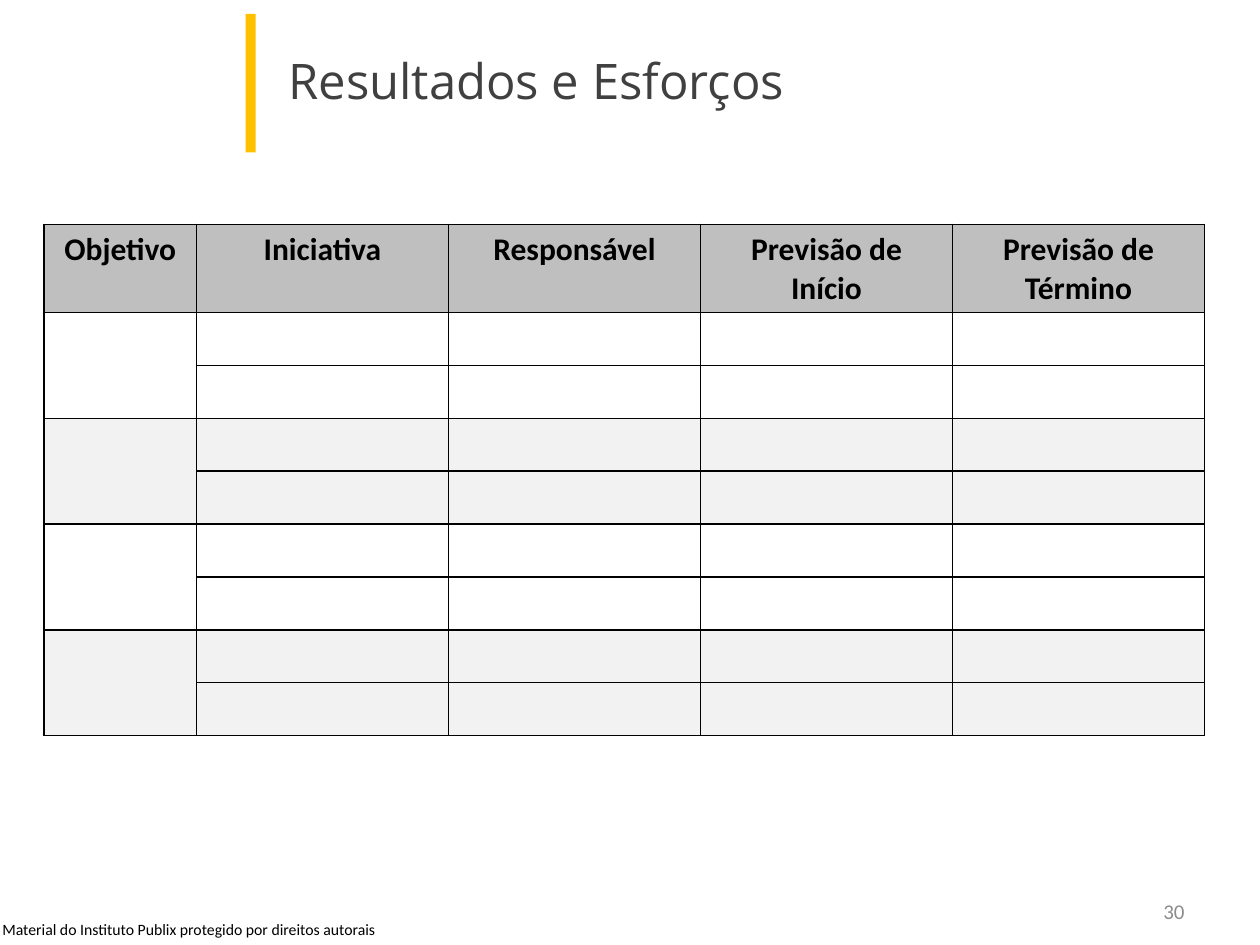
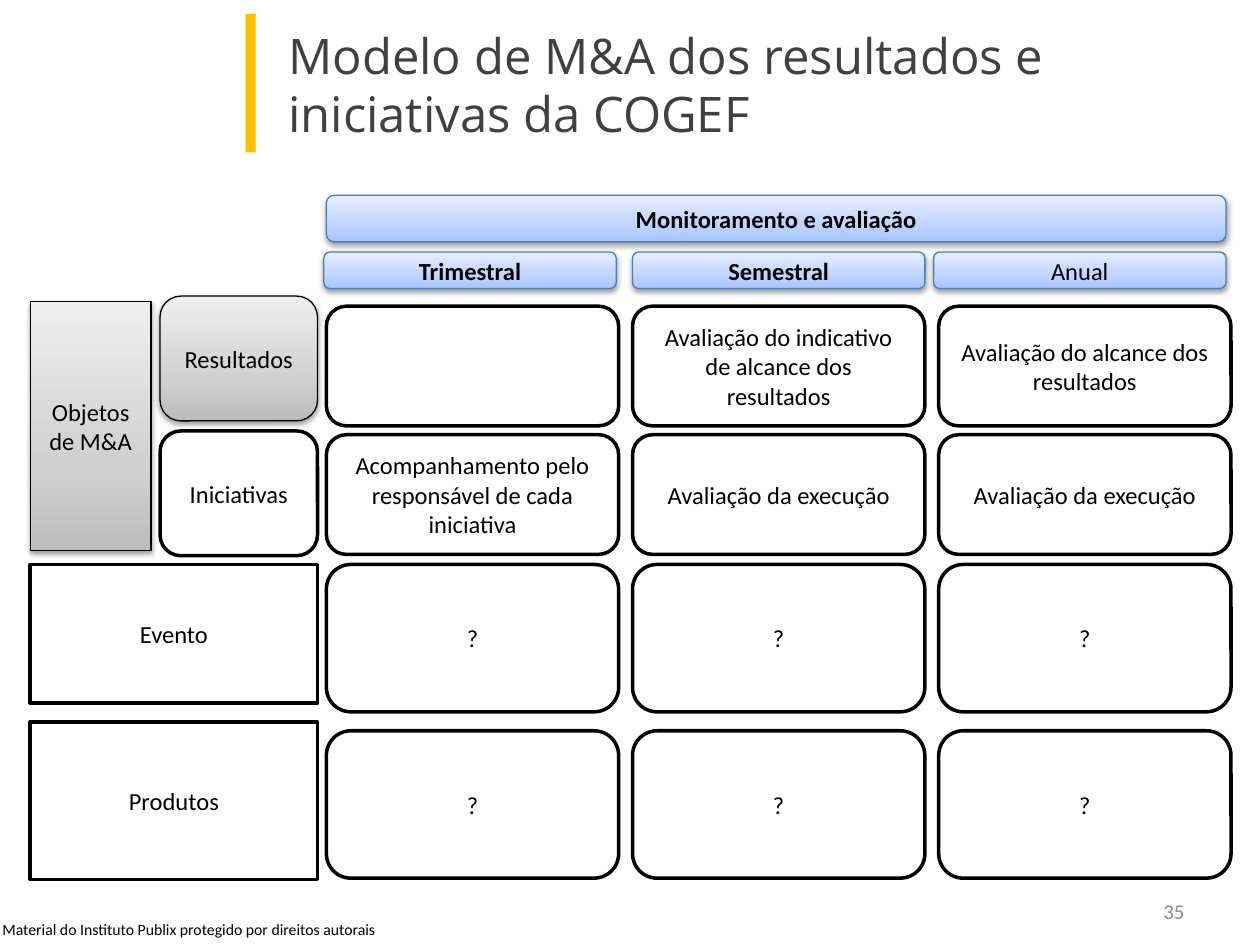
from dataclasses import dataclass

from lxml import etree
from pptx import Presentation
from pptx.dml.color import RGBColor
from pptx.enum import shapes, text
from pptx.oxml import parse_xml
from pptx.oxml.ns import nsdecls, qn
from pptx.util import Inches, Pt


@dataclass(frozen=True)
class Theme:
    body: str = "Calibri"
    head: str = "Open Sans"
    black: str = "000000"
    white: str = "FFFFFF"
    gold: str = "FFC000"
    title: str = "404040"
    page: str = "8C8C8C"
    dark: str = "BFBFBF"
    pale: str = "F2F2F2"
    edge: str = "4B7EBC"
    blues: tuple = ("A4C4FF", "BFD4FF", "E6EEFF")
    grays: tuple = ("BDBDBD", "D1D1D1", "EEEEEE")
    big: int = 28
    mid: int = 18
    small: int = 14
    num: int = 12
    tiny: int = 9


T = Theme()
ROUND = shapes.MSO_SHAPE.ROUNDED_RECTANGLE
RECT = shapes.MSO_SHAPE.RECTANGLE
CENTER = text.PP_ALIGN.CENTER


def rgb(code):
    return RGBColor.from_string(code)


def write(frame, words, size, color=T.black, font=T.body, bold=False, align=None):
    frame.text = words
    para = frame.paragraphs[0]
    para.alignment = align
    for run in para.runs:
        run.font.size = Pt(size)
        run.font.name = font
        run.font.bold = bold
        run.font.color.rgb = rgb(color)


def label(slide, box, words, size, wrap=True, anchor=text.MSO_ANCHOR.MIDDLE, **style):
    frame = slide.shapes.add_textbox(*map(Inches, box)).text_frame
    frame.word_wrap = wrap
    frame.vertical_anchor = anchor
    write(frame, words, size, **style)


def shade(shape, colors):
    """Fill from bottom to top with three colours and cast a soft shadow."""
    stops = "".join(
        f'<a:gs pos="{pos}"><a:srgbClr val="{color}"/></a:gs>'
        for pos, color in zip((0, 35000, 100000), colors))
    props = shape._element.spPr
    props.find(qn("a:prstGeom")).addnext(parse_xml(
        f'<a:gradFill {nsdecls("a")} rotWithShape="1"><a:gsLst>{stops}</a:gsLst>'
        '<a:lin ang="16200000" scaled="0"/></a:gradFill>'))
    props.find(qn("a:effectLst")).append(parse_xml(
        f'<a:outerShdw {nsdecls("a")} blurRad="40000" dist="20000" dir="5400000" '
        f'rotWithShape="0"><a:srgbClr val="{T.black}"><a:alpha val="38000"/>'
        '</a:srgbClr></a:outerShdw>'))


def block(slide, kind, box, words="", colors=None, edge=T.black, bold=False):
    shape = slide.shapes.add_shape(kind, *map(Inches, box))
    shape.shadow.inherit = False
    if colors:
        shade(shape, colors)
    else:
        shape.fill.solid()
        shape.fill.fore_color.rgb = rgb(T.white)
    shape.line.color.rgb = rgb(edge)
    shape.line.width = Pt(0.75 if colors else 2)
    if words:
        shape.text_frame.word_wrap = True
        shape.text_frame.vertical_anchor = text.MSO_ANCHOR.MIDDLE
        write(shape.text_frame, words, T.small, bold=bold, align=CENTER)


def frame_cell(cell, fill):
    props = cell._tc.get_or_add_tcPr()
    for side in ("lnL", "lnR", "lnT", "lnB"):
        line = etree.SubElement(props, qn(f"a:{side}"), w=str(Pt(1)))
        solid = etree.SubElement(line, qn("a:solidFill"))
        etree.SubElement(solid, qn("a:srgbClr"), val=T.black)
    cell.fill.solid()
    cell.fill.fore_color.rgb = rgb(fill)


def start(deck, title, page, top):
    """Add a slide with the shared bar, title, footer and page number."""
    slide = deck.slides.add_slide(deck.slide_layouts[6])
    label(slide, (-0.08, 7.25, 3.21, 0.25),
          "Material do Instituto Publix protegido por direitos autorais",
          T.tiny, wrap=False, anchor=text.MSO_ANCHOR.TOP)
    bar = slide.shapes.add_shape(RECT, *map(Inches, (1.95, 0.11, 0.08, 1.1)))
    bar.shadow.inherit = False
    bar.fill.solid()
    bar.fill.fore_color.rgb = rgb(T.gold)
    bar.line.fill.background()
    label(slide, (7.17, 7.03, 2.33, 0.4), page, T.num, color=T.page,
          align=text.PP_ALIGN.RIGHT)
    label(slide, (2.19, top, 7.31, 0.69), title, T.big, color=T.title, font=T.head)
    return slide


def plan(deck):
    slide = start(deck, "Resultados e Esforços", "30", 0.29)
    heads = ("Objetivo", "Iniciativa", "Responsável",
             "Previsão de Início", "Previsão de Término")
    count, high = 9, 0.42
    table = slide.shapes.add_table(
        count, len(heads), *map(Inches, (0.35, 1.78, 9.21, count * high))).table
    table.first_row = table.horz_banding = False
    for col, width in zip(table.columns, (1.21, 2, 2, 2, 2)):
        col.width = Inches(width)
    for row in table.rows:
        row.height = Inches(high)

    # Header, then pairs of rows in alternate shades
    for c, head in enumerate(heads):
        frame_cell(table.cell(0, c), T.dark)
        write(table.cell(0, c).text_frame, head, T.mid, bold=True, align=CENTER)
        for r in range(1, count):
            frame_cell(table.cell(r, c), (T.white, T.pale)[(r - 1) // 2 % 2])
    for r in range(1, count, 2):
        table.cell(r, 0).merge(table.cell(r + 1, 0))


def model(deck):
    slide = start(deck, "Modelo de M&A dos resultados e iniciativas da COGEF", "35", 0.32)
    left, step, wide = 2.59, 2.43, 2.32

    # Grid of activities: top, height, texts
    grid = (
        (2.43, 0.95, ("", "Avaliação do indicativo de alcance dos resultados",
                      "Avaliação do alcance dos resultados")),
        (3.45, 0.95, ("Acompanhamento pelo responsável de cada iniciativa",
                      "Avaliação da execução", "Avaliação da execução")),
        (4.48, 1.17, "???"),
        (5.8, 1.17, "???"),
    )
    for top, high, row in grid:
        for c, words in enumerate(row):
            block(slide, ROUND, (left + c * step, top, wide, high), words)

    # Column headings
    block(slide, ROUND, (left, 1.55, 7.14, 0.37), "Monitoramento e avaliação",
          T.blues, T.edge, True)
    for x, words, bold in ((2.57, "Trimestral", True), (5.02, "Semestral", True),
                           (7.41, "Anual", False)):
        block(slide, ROUND, (x, 2, wide, 0.29), words, T.blues, T.edge, bold)

    # Row headings
    block(slide, ROUND, (1.27, 2.35, 1.25, 0.99), "Resultados", T.grays)
    block(slide, ROUND, (1.27, 3.42, 1.25, 0.99), "Iniciativas")
    block(slide, RECT, (0.24, 2.39, 0.96, 1.98), "Objetos de M&A", T.grays)
    block(slide, RECT, (0.24, 4.48, 2.28, 1.1), "Evento")
    block(slide, RECT, (0.24, 5.73, 2.28, 1.25), "Produtos")


def main():
    deck = Presentation()
    deck.slide_width, deck.slide_height = Inches(10), Inches(7.5)
    plan(deck)
    model(deck)
    deck.save("out.pptx")


if __name__ == "__main__":
    main()
